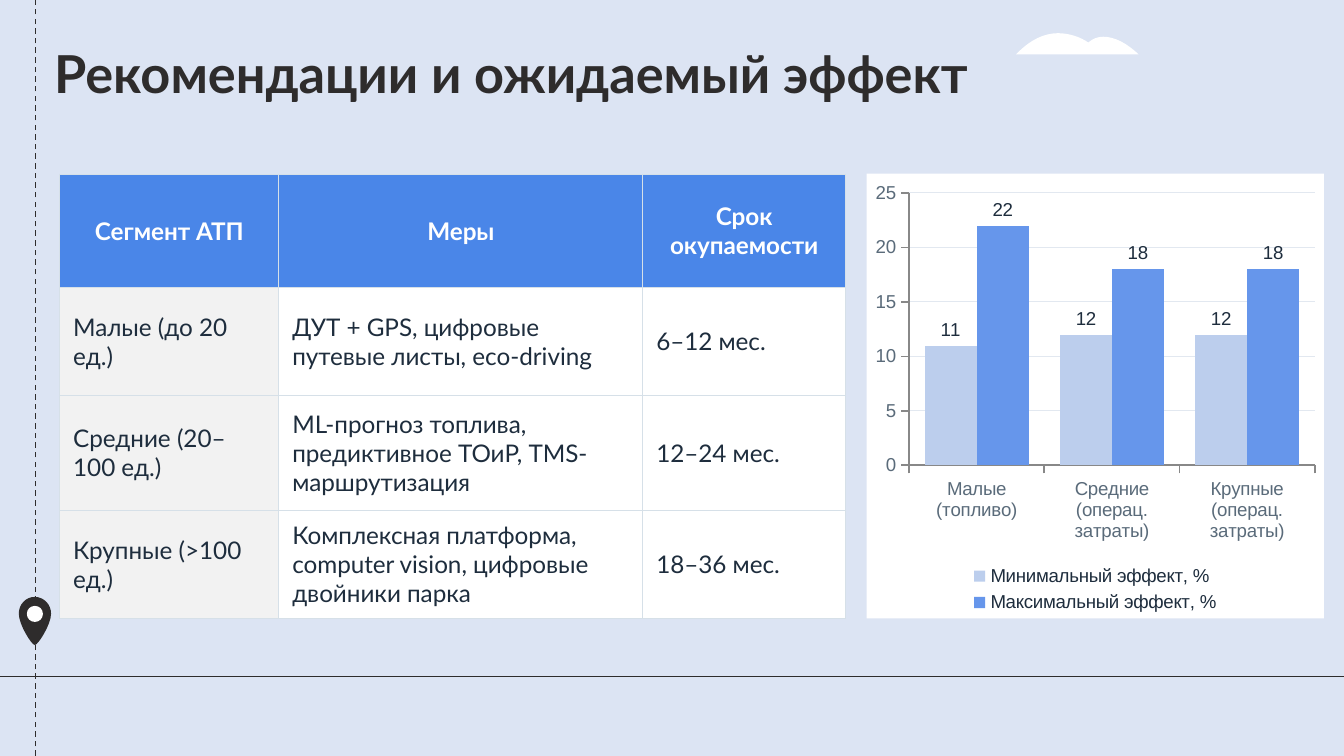
"""Build the slide of recommendations and expected effect."""
from dataclasses import dataclass
from typing import Any

from lxml import etree
from pptx import Presentation
from pptx.chart.data import CategoryChartData
from pptx.dml.color import RGBColor
from pptx.enum.chart import XL_CHART_TYPE, XL_LABEL_POSITION, XL_LEGEND_POSITION, XL_TICK_MARK
from pptx.enum.dml import MSO_LINE
from pptx.enum.shapes import MSO_CONNECTOR
from pptx.enum.text import MSO_ANCHOR, PP_ALIGN
from pptx.oxml import parse_xml
from pptx.oxml.ns import nsdecls, qn
from pptx.util import Pt

COLUMNS = XL_CHART_TYPE.COLUMN_CLUSTERED
OUTSIDE_END = XL_LABEL_POSITION.OUTSIDE_END
BOTTOM = XL_LEGEND_POSITION.BOTTOM
TICK_OUT = XL_TICK_MARK.OUTSIDE
TICK_NONE = XL_TICK_MARK.NONE
DASH = MSO_LINE.DASH
STRAIGHT = MSO_CONNECTOR.STRAIGHT
MIDDLE = MSO_ANCHOR.MIDDLE
CENTER, LEFT = PP_ALIGN.CENTER, PP_ALIGN.LEFT

COLORS = {
    "page": "DCE4F3", "dark": "2E2C2C", "white": "FFFFFF", "header": "4A86E8",
    "segment": "F2F2F2", "text": "1E2D3D", "border": "D6E0E8", "axis_text": "5A6B7A",
    "axis": "888888", "grid": "E2E8F0", "minimum": "BCCEED", "maximum": "6696EB",
}
TITLE_FONT = {"name": "Lato", "size": Pt(28), "bold": True}
HEADER_FONT = {"name": "Lato", "size": Pt(13), "bold": True}
BODY_FONT = HEADER_FONT | {"bold": False}
CHART_FONT = {"name": "Arial", "size": Pt(10)}
UNITS_PER_POINT = 100

Point = tuple[float, float]


@dataclass
class Rule:
    start: Point
    end: Point
    dash: Any = None


@dataclass
class Outline:
    """Closed outline; a one-point segment is straight, a three-point one is a curve."""
    color: str
    start: Point
    segments: list[tuple[Point, ...]]


@dataclass
class Series:
    name: str
    values: tuple[int, ...]
    color: str


RULES = [
    Rule((19, 405), (19, 0), DASH),
    Rule((-0.7, 362.3), (722, 362.3)),
]
OUTLINES = [
    Outline("dark", (18.7, 319.8), [
        ((13.9, 319.8), (10.1, 323.8), (10.1, 328.8)),
        ((10.1, 334.6), (17, 345.6), (18.7, 345.6)),
        ((20.4, 345.6), (27.4, 334.6), (27.4, 328.8)),
        ((27.4, 323.8), (23.5, 319.8), (18.7, 319.8)),
    ]),
    Outline("white", (18.7, 324.6), [
        ((16.3, 324.6), (14.4, 326.5), (14.4, 328.9)),
        ((14.4, 331.3), (16.3, 333.2), (18.7, 333.2)),
        ((21.1, 333.2), (23, 331.3), (23, 328.9)),
        ((23, 326.5), (21.1, 324.6), (18.7, 324.6)),
    ]),
    Outline("white", (566.8, 17.8), [
        ((573, 17.8), (579, 20), (583, 22.8)),
        ((585.5, 20.8), (588, 19.7), (591, 19.7)),
        ((597, 19.7), (603.5, 23), (610, 29.2)),
        ((544.3, 29.2),),
        ((552.2, 20.9), (560, 17.8), (566.8, 17.8)),
    ]),
]
ROWS = [
    ("Сегмент АТП", "Меры", "Срок окупаемости"),
    ("Малые (до 20 ед.)", "ДУТ + GPS, цифровые путевые листы, eco-driving", "6–12 мес."),
    ("Средние (20–100 ед.)", "ML-прогноз топлива, предиктивное ТОиР, TMS-маршрутизация",
     "12–24 мес."),
    ("Крупные (>100 ед.)", "Комплексная платформа, computer vision, цифровые двойники парка",
     "18–36 мес."),
]
COLUMN_WIDTHS = (117.4, 195, 108.5)
ROW_HEIGHTS = (61, 57.6, 61.6, 57.8)
CATEGORIES = ["Малые\n(топливо)", "Средние\n(операц. затраты)", "Крупные\n(операц. затраты)"]
SERIES = [
    Series("Минимальный эффект, %", (11, 12, 12), "minimum"),
    Series("Максимальный эффект, %", (22, 18, 18), "maximum"),
]


def rgb(name: str) -> RGBColor:
    """Return a named colour."""
    return RGBColor.from_string(COLORS[name])


def apply(target: Any, formats: dict[str, Any]) -> None:
    """Set every attribute listed in formats."""
    for name, value in formats.items():
        setattr(target, name, value)


def style_font(font: Any, formats: dict[str, Any], color: str) -> None:
    """Format a font and colour it."""
    apply(font, formats)
    font.color.rgb = rgb(color)


def paint(fill: Any, color: str) -> None:
    """Fill with one solid colour."""
    fill.solid()
    fill.fore_color.rgb = rgb(color)


def style_line(line: Any, color: str, width: float) -> None:
    """Set the colour and width of a line."""
    paint(line.fill, color)
    line.width = Pt(width)


def draw_rule(page: Any, rule: Rule) -> None:
    """Draw a straight thin line."""
    ends = (Pt(value) for value in rule.start + rule.end)
    connector = page.shapes.add_connector(STRAIGHT, *ends)
    style_line(connector.line, "dark", 0.75)
    connector.line.dash_style = rule.dash
    etree.SubElement(connector._element.spPr, qn("a:effectLst"))


def to_units(point: Point) -> tuple[int, int]:
    """Convert points to outline units."""
    return round(point[0] * UNITS_PER_POINT), round(point[1] * UNITS_PER_POINT)


def draw_outline(page: Any, outline: Outline) -> None:
    """Draw a filled closed outline of straight and curved segments."""
    builder = page.shapes.build_freeform(*to_units(outline.start), scale=Pt(1) / UNITS_PER_POINT)
    anchors = [to_units(segment[-1]) for segment in outline.segments]
    builder.add_line_segments(anchors, close=True)
    shape = builder.convert_to_shape()
    left, top = (min(values) for values in zip(*anchors))
    steps = list(shape._element.iter(qn("a:lnTo")))
    for step, segment in zip(steps, outline.segments):
        if len(segment) == 3:
            step.tag = qn("a:cubicBezTo")
            for index, (x, y) in enumerate(map(to_units, segment[:2])):
                step.insert(index, parse_xml(
                    f'<a:pt {nsdecls("a")} x="{x - left}" y="{y - top}"/>'))
    shape.shadow.inherit = False
    paint(shape.fill, outline.color)
    shape.line.fill.background()


def draw_title(page: Any, text: str) -> None:
    """Write the slide title."""
    box = page.shapes.add_textbox(Pt(22), Pt(15.1), Pt(607), Pt(45.4))
    margins = ("margin_left", "margin_top", "margin_right", "margin_bottom")
    apply(box.text_frame, dict.fromkeys(margins, Pt(7.2)) | {"word_wrap": True, "text": text})
    style_font(box.text_frame.paragraphs[0].runs[0].font, TITLE_FONT, "dark")


def add_borders(cell: Any) -> None:
    """Outline a cell on all four sides."""
    properties = cell._tc.get_or_add_tcPr()
    for index, side in enumerate(("lnL", "lnR", "lnT", "lnB")):
        properties.insert(index, parse_xml(
            f'<a:{side} {nsdecls("a")} w="{Pt(0.5)}"><a:solidFill>'
            f'<a:srgbClr val="{COLORS["border"]}"/></a:solidFill></a:{side}>'))


def draw_table(page: Any) -> None:
    """Draw the table of measures by segment."""
    table = page.shapes.add_table(len(ROWS), len(COLUMN_WIDTHS), Pt(32), Pt(93.2),
                                  Pt(sum(COLUMN_WIDTHS)), Pt(sum(ROW_HEIGHTS))).table
    for column, width in zip(table.columns, COLUMN_WIDTHS):
        column.width = Pt(width)
    for r, (row, height) in enumerate(zip(ROWS, ROW_HEIGHTS)):
        table.rows[r].height = Pt(height)
        for c, text in enumerate(row):
            cell = table.cell(r, c)
            apply(cell, {"text": text, "vertical_anchor": MIDDLE})
            paint(cell.fill, "header" if r == 0 else "segment" if c == 0 else "white")
            add_borders(cell)
            para = cell.text_frame.paragraphs[0]
            para.alignment = LEFT if r else CENTER
            style_font(para.runs[0].font, BODY_FONT if r else HEADER_FONT,
                       "text" if r else "white")


def draw_chart(page: Any) -> None:
    """Draw the column chart of minimum and maximum effect."""
    data = CategoryChartData()
    data.categories = CATEGORIES
    for item in SERIES:
        data.add_series(item.name, item.values)
    chart = page.shapes.add_chart(COLUMNS, Pt(464.2), Pt(93), Pt(245), Pt(238.3), data).chart
    apply(chart, {"has_title": False, "has_legend": True})
    style_font(chart.font, CHART_FONT, "dark")
    chart._chartSpace.find(qn("c:chart")).addnext(parse_xml(
        f'<c:spPr {nsdecls("c", "a")}><a:solidFill><a:srgbClr val="{COLORS["white"]}"/>'
        '</a:solidFill><a:ln><a:noFill/></a:ln></c:spPr>'))
    apply(chart.legend, {"position": BOTTOM, "include_in_layout": False})
    style_font(chart.legend.font, CHART_FONT, "text")
    for axis in (chart.category_axis, chart.value_axis):
        apply(axis, {"major_tick_mark": TICK_OUT, "minor_tick_mark": TICK_NONE})
        style_font(axis.tick_labels.font, CHART_FONT, "axis_text")
        style_line(axis.format.line, "axis", 1)
    apply(chart.value_axis, {"minimum_scale": 0, "maximum_scale": 25, "major_unit": 5})
    style_line(chart.value_axis.major_gridlines.format.line, "grid", 0.5)
    plot = chart.plots[0]
    apply(plot, {"gap_width": 60, "overlap": 0, "vary_by_categories": False})
    for series, item in zip(plot.series, SERIES):
        paint(series.format.fill, item.color)
        labels = series.data_labels
        apply(labels, {"show_value": True, "number_format": "#,##0",
                       "number_format_is_linked": False, "position": OUTSIDE_END})
        style_font(labels.font, CHART_FONT, "text")


def main() -> None:
    """Build and save the deck."""
    deck = Presentation()
    apply(deck, {"slide_width": Pt(720), "slide_height": Pt(405)})
    page = deck.slides.add_slide(deck.slide_layouts[6])
    paint(page.background.fill, "page")
    for rule in RULES:
        draw_rule(page, rule)
    for outline in OUTLINES:
        draw_outline(page, outline)
    draw_table(page)
    draw_chart(page)
    draw_title(page, "Рекомендации и ожидаемый эффект")
    deck.save("out.pptx")


if __name__ == "__main__":
    main()
